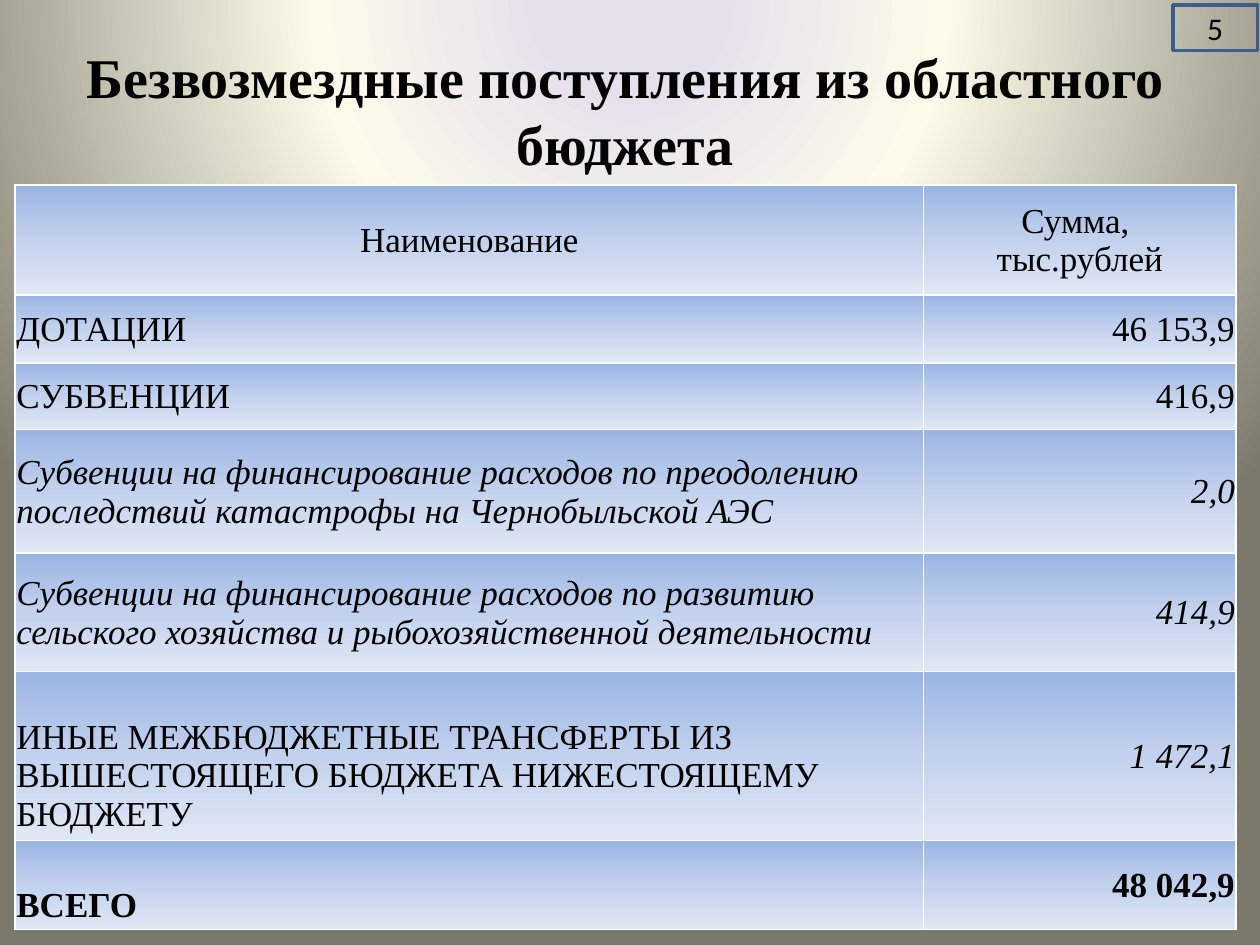
from lxml import etree
from pptx import Presentation
from pptx.dml.color import RGBColor
from pptx.enum.shapes import MSO_SHAPE
from pptx.enum.text import MSO_ANCHOR, PP_ALIGN
from pptx.oxml.ns import qn
from pptx.util import Inches, Pt

LEFT, CENTER, RIGHT = PP_ALIGN.LEFT, PP_ALIGN.CENTER, PP_ALIGN.RIGHT
TOP, MIDDLE = MSO_ANCHOR.TOP, MSO_ANCHOR.MIDDLE
RECTANGLE = MSO_SHAPE.RECTANGLE

COLUMN_WIDTHS = [7.21, 2.48]
# name, amount, height, name italic, amount italic, bold, extra space above name
ROWS = [
    ("ДОТАЦИИ", "46 153,9", 0.54, False, False, False, 0),
    ("СУБВЕНЦИИ", "416,9", 0.53, False, False, False, 0),
    ("Субвенции на финансирование расходов по преодолению последствий "
     "катастрофы на Чернобыльской АЭС", "2,0", 0.98, True, True, False, 0),
    ("Субвенции на финансирование расходов по развитию сельского хозяйства "
     "и рыбохозяйственной деятельности", "414,9", 0.94, True, True, False, 0),
    ("ИНЫЕ МЕЖБЮДЖЕТНЫЕ ТРАНСФЕРТЫ ИЗ ВЫШЕСТОЯЩЕГО БЮДЖЕТА НИЖЕСТОЯЩЕМУ "
     "БЮДЖЕТУ", "1 472,1", 1.34, False, True, False, 0.31),
    ("ВСЕГО", "48 042,9", 0.71, False, False, True, 0.31),
]
HEADER_HEIGHT = 0.87


def color(value):
    return RGBColor.from_string(value)


def add_solid_color(parent, value):
    fill = etree.SubElement(parent, qn("a:solidFill"))
    etree.SubElement(fill, qn("a:srgbClr"), val=value)


def add_gradient(parent, stops):
    """Add a gradient with (percent, hex) stops and return it without a direction."""
    gradient = etree.SubElement(parent, qn("a:gradFill"), rotWithShape="1")
    stop_list = etree.SubElement(gradient, qn("a:gsLst"))
    for percent, value in stops:
        stop = etree.SubElement(stop_list, qn("a:gs"), pos=str(percent * 1000))
        etree.SubElement(stop, qn("a:srgbClr"), val=value)
    return gradient


def write_text(frame, text, size=20, font="Times New Roman", align=LEFT,
               bold=False, italic=False):
    paragraph = frame.paragraphs[0]
    paragraph.text = text
    paragraph.alignment = align
    for run in paragraph.runs:
        run.font.size = Pt(size)
        run.font.name = font
        run.font.bold = bold
        run.font.italic = italic
        run.font.color.rgb = color("000000")


class SlideBuilder:
    background_stops = [(11, "E6E0EC"), (40, "FDFAEA"), (100, "7B796B")]
    cell_stops = [(0, "9AB5E4"), (50, "C2D1ED"), (100, "E1E8F5")]
    border = "FFFFFF"
    outline = "3A5F8C"

    def __init__(self, presentation):
        self.slide = presentation.slides.add_slide(presentation.slide_layouts[6])

    def background(self):
        self.slide.background.fill.gradient()
        properties = self.slide.element.find(".//" + qn("p:bgPr"))
        properties.remove(properties.find(qn("a:gradFill")))
        gradient = add_gradient(properties, self.background_stops)
        circle = etree.SubElement(gradient, qn("a:path"))
        circle.set("path", "circle")
        etree.SubElement(circle, qn("a:fillToRect"),
                         l="50000", t="-80000", r="50000", b="180000")
        properties.insert(0, gradient)

    def title(self, text, left, top, width, height):
        box = self.slide.shapes.add_textbox(
            Inches(left), Inches(top), Inches(width), Inches(height))
        box.text_frame.word_wrap = True
        box.text_frame.vertical_anchor = TOP
        write_text(box.text_frame, text, size=32, align=CENTER, bold=True)

    def number_box(self, text, left, top, width, height):
        shape = self.slide.shapes.add_shape(
            RECTANGLE, Inches(left), Inches(top), Inches(width), Inches(height))
        shape.shadow.inherit = False
        shape.fill.background()
        shape.line.color.rgb = color(self.outline)
        shape.line.width = Pt(2)
        shape.text_frame.vertical_anchor = MIDDLE
        write_text(shape.text_frame, text, size=18, font="Calibri", align=CENTER)

    def cell(self, cell, text, space_above=0, **text_format):
        cell.vertical_anchor = MIDDLE
        cell.margin_left = cell.margin_right = Inches(0.01)
        cell.margin_top = Inches(0.01 + space_above)
        cell.margin_bottom = 0
        write_text(cell.text_frame, text, **text_format)
        properties = cell._tc.get_or_add_tcPr()
        for side in ("a:lnL", "a:lnR", "a:lnT", "a:lnB"):
            line = etree.SubElement(properties, qn(side), w=str(Pt(1)))
            add_solid_color(line, self.border)
        gradient = add_gradient(properties, self.cell_stops)
        etree.SubElement(gradient, qn("a:lin"), ang="5400000", scaled="0")

    def table(self, left, top):
        heights = [HEADER_HEIGHT] + [row[2] for row in ROWS]
        table = self.slide.shapes.add_table(
            len(heights), len(COLUMN_WIDTHS), Inches(left), Inches(top),
            Inches(sum(COLUMN_WIDTHS)), Inches(sum(heights))).table
        table.first_row = table.horz_banding = False
        for column, width in zip(table.columns, COLUMN_WIDTHS):
            column.width = Inches(width)
        for row, height in zip(table.rows, heights):
            row.height = Inches(height)
        for index, heading in enumerate(["Наименование", "Сумма, \nтыс.рублей"]):
            self.cell(table.cell(0, index), heading, align=CENTER)
        for index, row in enumerate(ROWS, start=1):
            name, amount, _, name_italic, amount_italic, bold, space = row
            self.cell(table.cell(index, 0), name, space_above=space,
                      italic=name_italic, bold=bold)
            self.cell(table.cell(index, 1), amount, align=RIGHT,
                      italic=amount_italic, bold=bold)


def main():
    presentation = Presentation()
    presentation.slide_width = Inches(10)
    presentation.slide_height = Inches(7.5)
    builder = SlideBuilder(presentation)
    builder.background()
    builder.title("Безвозмездные поступления из областного бюджета",
                  0.28, 0.29, 9.37, 1.72)
    builder.table(0.12, 1.47)
    builder.number_box("5", 9.31, 0.04, 0.67, 0.36)
    presentation.save("out.pptx")


if __name__ == "__main__":
    main()
